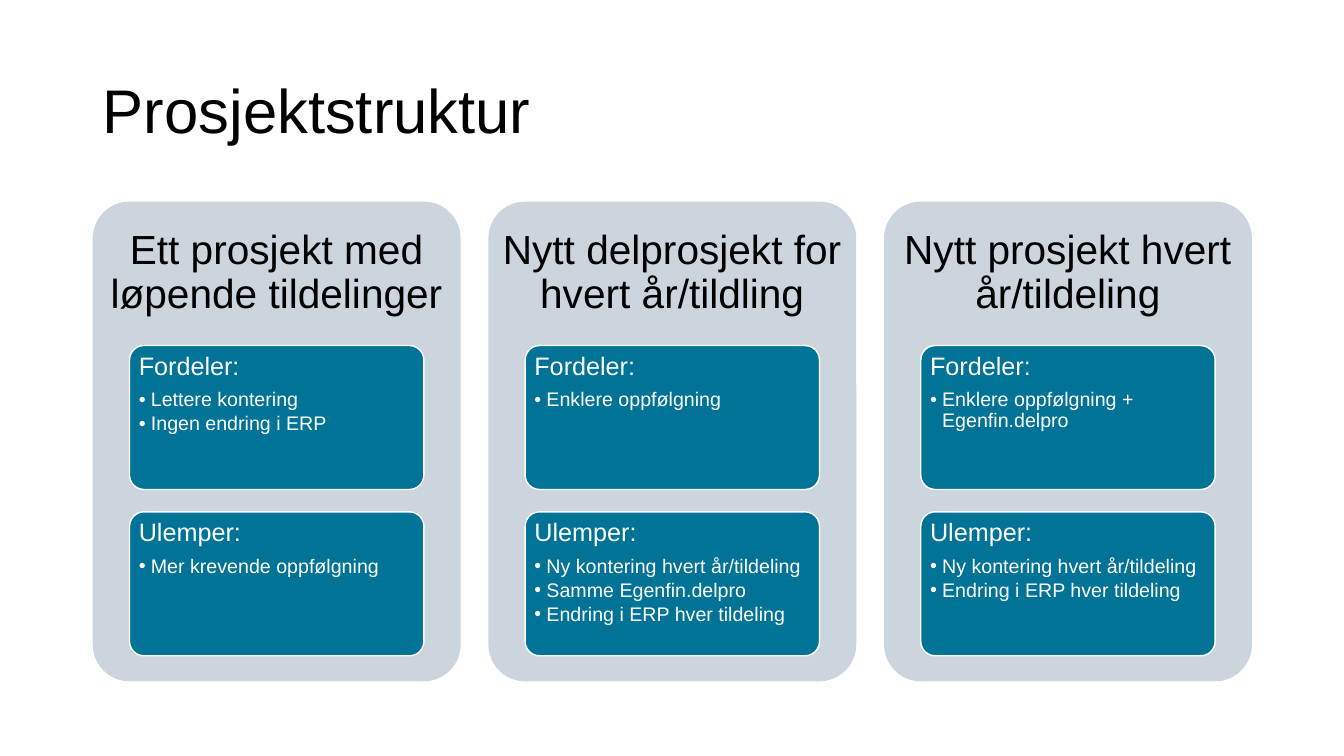
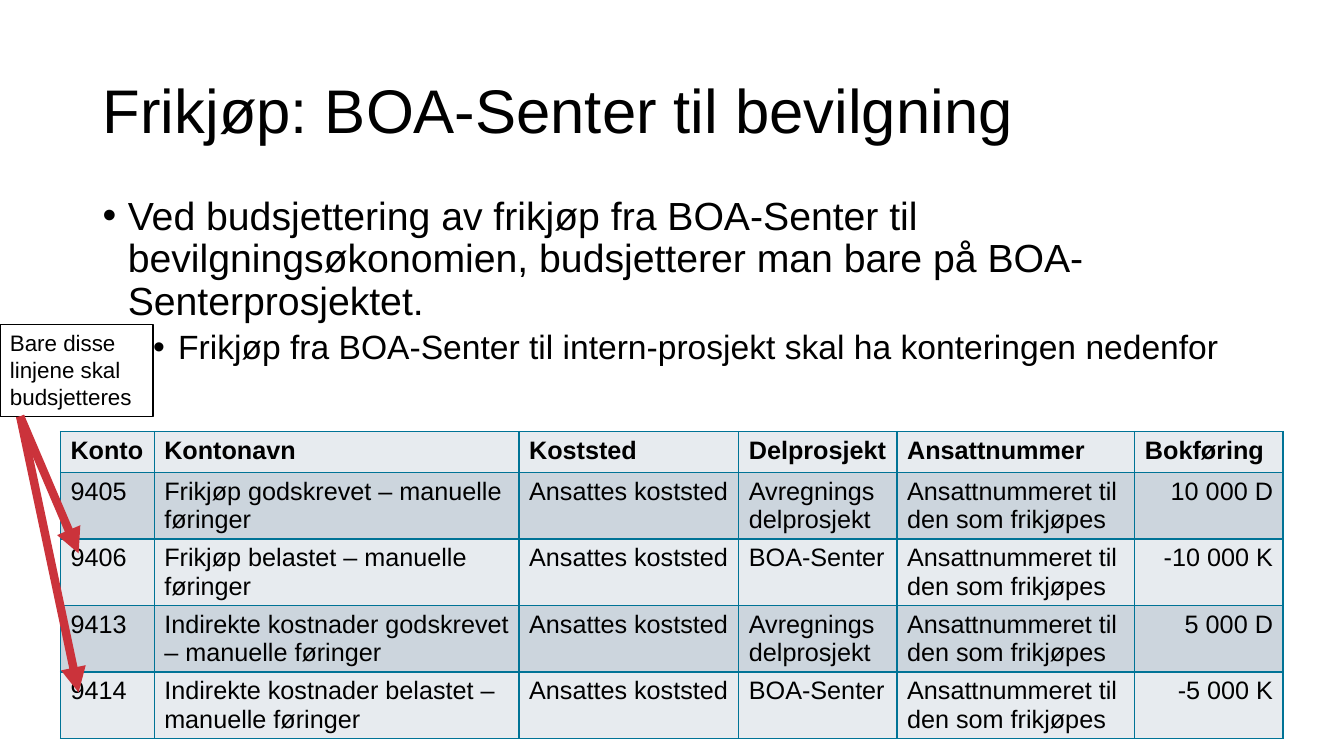
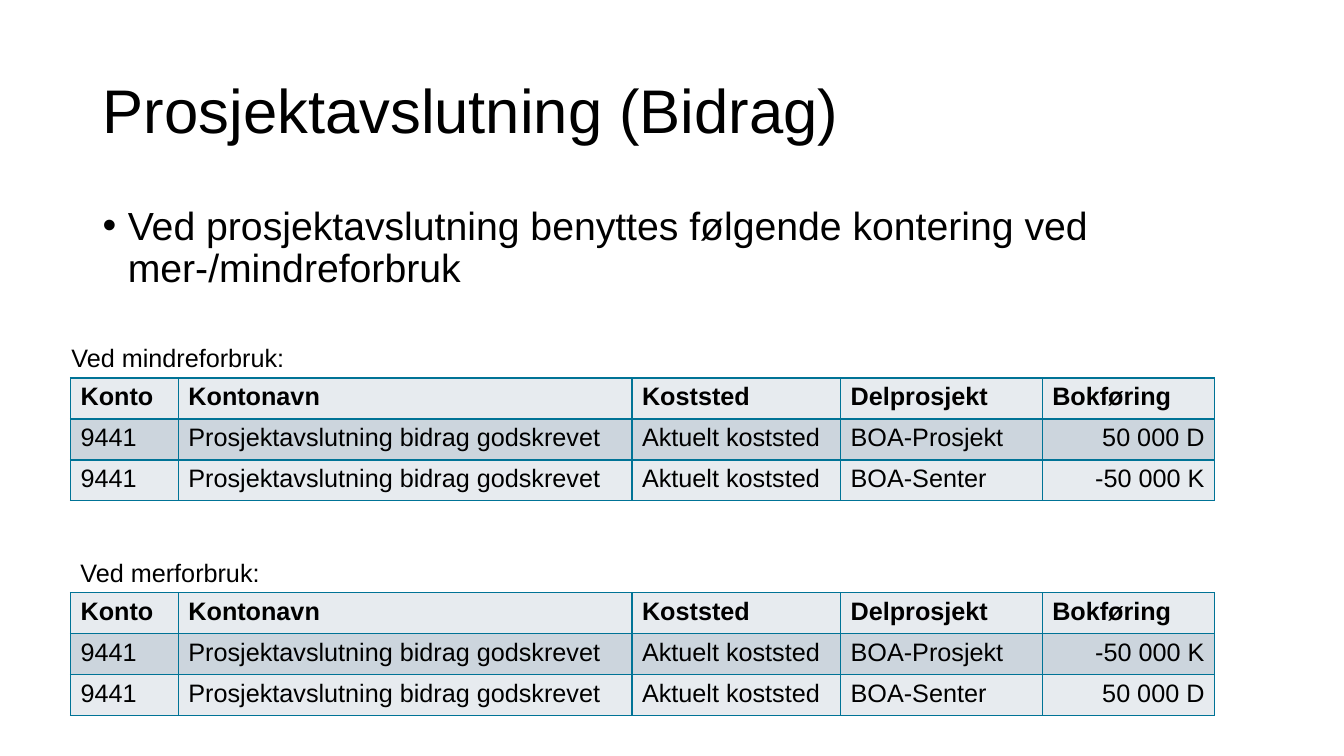
from lxml import etree
from pptx import Presentation
from pptx.dml.color import RGBColor
from pptx.enum.shapes import MSO_CONNECTOR, MSO_SHAPE
from pptx.enum.text import MSO_ANCHOR, MSO_AUTO_SIZE, PP_ALIGN
from pptx.oxml.ns import qn
from pptx.util import Inches, Pt

BLACK = RGBColor(0x00, 0x00, 0x00)
WHITE = RGBColor(0xFF, 0xFF, 0xFF)
TEAL = RGBColor(0x00, 0x73, 0x96)
RED = RGBColor(0xCB, 0x33, 0x3B)
CARD = RGBColor(0xCC, 0xD5, 0xDD)
PALE = RGBColor(0xE7, 0xEB, 0xEF)
FONT = "Arial"
LEFT, CONTENT_W = 0.92, 11.5
ROW_H = 1.22 / 3

CARDS = [
    ("Ett prosjekt med løpende tildelinger",
     ["Lettere kontering", "Ingen endring i ERP"],
     ["Mer krevende oppfølgning"]),
    ("Nytt delprosjekt for hvert år/tildling",
     ["Enklere oppfølgning"],
     ["Ny kontering hvert år/tildeling", "Samme Egenfin.delpro",
      "Endring i ERP hver tildeling"]),
    ("Nytt prosjekt hvert år/tildeling",
     ["Enklere oppfølgning + Egenfin.delpro"],
     ["Ny kontering hvert år/tildeling", "Endring i ERP hver tildeling"]),
]

BUYOUT_COLS = {"Konto": 0.93, "Kontonavn": 3.62, "Koststed": 2.18,
               "Delprosjekt": 1.57, "Ansattnummer": 2.36, "Bokføring": 1.47}
BUYOUT_LINES = [
    ("9405", "Frikjøp godskrevet – manuelle føringer", "Avregningsdelprosjekt", "10 000 D"),
    ("9406", "Frikjøp belastet – manuelle føringer", "BOA-Senter", "-10 000 K"),
    ("9413", "Indirekte kostnader godskrevet – manuelle føringer",
     "Avregningsdelprosjekt", "5 000 D"),
    ("9414", "Indirekte kostnader belastet – manuelle føringer", "BOA-Senter", "-5 000 K"),
]

CLOSING_COLS = {"Konto": 1.07, "Kontonavn": 4.5, "Koststed": 2.07,
                "Delprosjekt": 2, "Bokføring": 1.71}
# Label, label left, label top, amounts for project and centre
CLOSINGS = [
    ("Ved mindreforbruk:", 0.61, 3.35, ("50 000 D", "-50 000 K")),
    ("Ved merforbruk:", 0.7, 5.48, ("-50 000 K", "50 000 D")),
]


def box(x, y, w, h):
    return [Inches(v) for v in (x, y, w, h)]


def write(p, text, size, color=BLACK, bold=False, bullet=None, **fmt):
    """Fill one paragraph; bullet is (left margin, hanging indent)."""
    if bullet:
        pPr = p._p.get_or_add_pPr()
        pPr.set("marL", str(Inches(bullet[0])))
        pPr.set("indent", str(-Inches(bullet[1])))
        etree.SubElement(pPr, qn("a:buFont"), typeface=FONT)
        etree.SubElement(pPr, qn("a:buChar"), char="•")
    for name, value in fmt.items():
        setattr(p, name, value)
    r = p.add_run()
    r.text = text
    for name, value in {"name": FONT, "size": Pt(size), "bold": bold}.items():
        setattr(r.font, name, value)
    r.font.color.rgb = color


def set_frame(tf, inset=(0.1, 0.05), anchor=MSO_ANCHOR.TOP):
    across, down = map(Inches, inset)
    for name, value in {"word_wrap": True, "auto_size": MSO_AUTO_SIZE.NONE,
                        "vertical_anchor": anchor,
                        "margin_left": across, "margin_right": across,
                        "margin_top": down, "margin_bottom": down}.items():
        setattr(tf, name, value)
    return tf


def add_text(s, at, **frame):
    return set_frame(s.shapes.add_textbox(*box(*at)).text_frame, **frame)


def add_box(s, kind, at, fill, line=None):
    sp = s.shapes.add_shape(kind, *box(*at))
    sp.shadow.inherit = False
    sp.fill.solid()
    sp.fill.fore_color.rgb = fill
    if kind == MSO_SHAPE.ROUNDED_RECTANGLE:
        sp.adjustments[0] = 0.1
    if line is None:
        sp.line.fill.background()
    else:
        sp.line.color.rgb = line
        sp.line.width = Pt(1)
    return sp


def add_titled_slide(prs, title):
    s = prs.slides.add_slide(prs.slide_layouts[5])
    sp = s.shapes.title
    sp.left, sp.top, sp.width, sp.height = box(LEFT, 0.4, CONTENT_W, 1.45)
    tf = set_frame(sp.text_frame, anchor=MSO_ANCHOR.MIDDLE)
    write(tf.paragraphs[0], title, 44, alignment=PP_ALIGN.LEFT, line_spacing=0.9)
    return s


def add_body(s, top, text, detail=None):
    tf = add_text(s, (LEFT, top, CONTENT_W, 4.76))
    write(tf.paragraphs[0], text, 28, bullet=(0.25, 0.25), line_spacing=0.9)
    if detail:
        write(tf.add_paragraph(), detail, 24, bullet=(0.75, 0.25),
              line_spacing=0.9, space_before=Pt(5))


def add_border(cell):
    tcPr = cell._tc.get_or_add_tcPr()
    for side in ("a:lnL", "a:lnR", "a:lnT", "a:lnB"):
        ln = etree.SubElement(tcPr, qn(side), w=str(Pt(1)))
        fill = etree.SubElement(ln, qn("a:solidFill"))
        etree.SubElement(fill, qn("a:srgbClr"), val=str(TEAL))


def add_ledger(s, x, y, cols, lines):
    """Posting table: header row, shaded rows in turn, amounts to the right."""
    rows = [tuple(cols)] + lines
    table = s.shapes.add_table(len(rows), len(cols), *box(
        x, y, sum(cols.values()), ROW_H * len(rows))).table
    for column, width in zip(table.columns, cols.values()):
        column.width = Inches(width)
    for i, row in enumerate(rows):
        table.rows[i].height = Inches(ROW_H)
        for j, text in enumerate(row):
            cell = table.cell(i, j)
            add_border(cell)
            cell.fill.solid()
            cell.fill.fore_color.rgb = CARD if i % 2 else PALE
            amount = i > 0 and j == len(cols) - 1
            write(cell.text_frame.paragraphs[0], text, 18, bold=i == 0,
                  alignment=PP_ALIGN.RIGHT if amount else PP_ALIGN.LEFT)


def add_arrow(s, start, end):
    line = s.shapes.add_connector(MSO_CONNECTOR.STRAIGHT,
                                  *[Inches(v) for v in start + end])
    line.line.color.rgb = RED
    line.line.width = Pt(6)
    etree.SubElement(line.line._get_or_add_ln(), qn("a:tailEnd"), type="triangle")
    etree.SubElement(line._element.spPr, qn("a:effectLst"))


def add_card(s, x, y, w, h, heading, pros, cons):
    add_box(s, MSO_SHAPE.ROUNDED_RECTANGLE, (x, y, w, h), CARD)
    part_h = 0.3 * h
    tf = add_text(s, (x, y, w, part_h), inset=(0.12, 0.12), anchor=MSO_ANCHOR.MIDDLE)
    write(tf.paragraphs[0], heading, 29, alignment=PP_ALIGN.CENTER, line_spacing=0.9)
    # Advantages above, drawbacks below
    for i, (label, points) in enumerate([("Fordeler:", pros), ("Ulemper:", cons)]):
        at = (x + 0.1 * w, y + part_h + i * 1.65, 0.8 * w, part_h)
        sp = add_box(s, MSO_SHAPE.ROUNDED_RECTANGLE, at, TEAL, WHITE)
        tf = set_frame(sp.text_frame, inset=(0.05, 0.04))
        write(tf.paragraphs[0], label, 18, WHITE, alignment=PP_ALIGN.LEFT,
              line_spacing=0.9, space_after=Pt(6.3))
        for point in points:
            write(tf.add_paragraph(), point, 14, WHITE, bullet=(0.12, 0.12),
                  alignment=PP_ALIGN.LEFT, line_spacing=0.9, space_after=Pt(2.1))


def build_structure(prs):
    s = add_titled_slide(prs, "Prosjektstruktur")
    card_w = 3.65
    pitch = (CONTENT_W - card_w) / (len(CARDS) - 1)
    for i, card in enumerate(CARDS):
        add_card(s, LEFT + i * pitch, 2, card_w, 4.76, *card)


def build_buyout(prs):
    s = add_titled_slide(prs, "Frikjøp: BOA-Senter til bevilgning")
    add_body(s, 1.9,
             "Ved budsjettering av frikjøp fra BOA-Senter til bevilgningsøkonomien, "
             "budsjetterer man bare på BOA-Senterprosjektet.",
             "Frikjøp fra BOA-Senter til intern-prosjekt skal ha konteringen nedenfor")
    add_ledger(s, 0.6, 4.28, BUYOUT_COLS, [
        (account, name, "Ansattes koststed", project,
         "Ansattnummeret til den som frikjøpes", amount)
        for account, name, project, amount in BUYOUT_LINES])
    # Callout with arrows to the two budgeted lines
    sp = add_box(s, MSO_SHAPE.RECTANGLE, (0, 3.22, 1.52, 0.91), WHITE, BLACK)
    write(set_frame(sp.text_frame).paragraphs[0],
          "Bare disse linjene skal budsjetteres", 16, alignment=PP_ALIGN.LEFT)
    for y in (5.49, 6.87):
        add_arrow(s, (0.2, 4.13), (0.78, y))


def build_closing(prs):
    s = add_titled_slide(prs, "Prosjektavslutning (Bidrag)")
    add_body(s, 2, "Ved prosjektavslutning benyttes følgende kontering ved "
                   "mer-/mindreforbruk")
    for label, x, y, amounts in CLOSINGS:
        add_ledger(s, 0.7, y + 0.4, CLOSING_COLS, [
            ("9441", "Prosjektavslutning bidrag godskrevet", "Aktuelt koststed",
             project, amount)
            for project, amount in zip(("BOA-Prosjekt", "BOA-Senter"), amounts)])
        write(add_text(s, (x, y, 4.03, 0.4)).paragraphs[0], label, 18)


def main():
    prs = Presentation()
    prs.slide_height = Inches(7.5)
    prs.slide_width = Inches(7.5 * 16 / 9)
    for build in (build_structure, build_buyout, build_closing):
        build(prs)
    prs.save("out.pptx")


if __name__ == "__main__":
    main()
